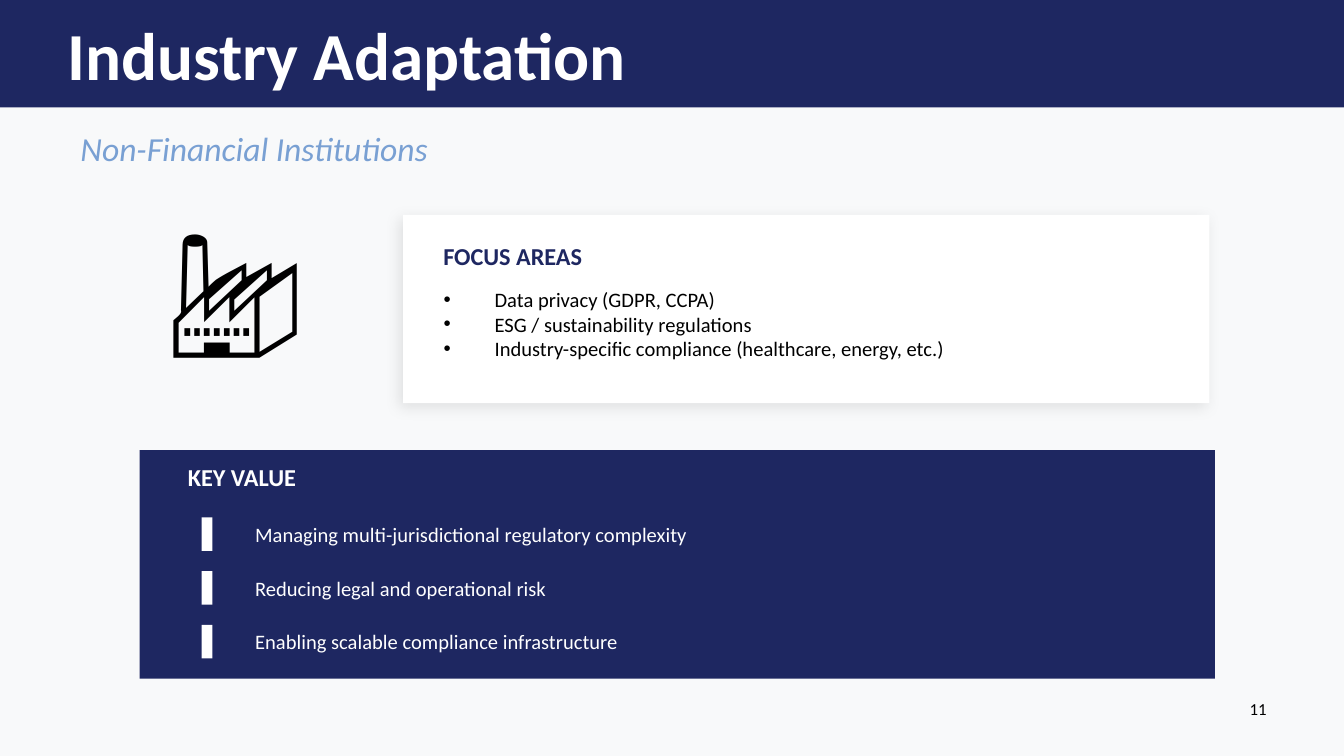
from lxml import etree
from pptx import Presentation
from pptx.dml.color import RGBColor
from pptx.enum.shapes import MSO_SHAPE
from pptx.enum.text import MSO_ANCHOR, MSO_AUTO_SIZE, PP_ALIGN
from pptx.util import Inches, Pt

RECT = MSO_SHAPE.RECTANGLE
TOP, MIDDLE = MSO_ANCHOR.TOP, MSO_ANCHOR.MIDDLE
FIXED = MSO_AUTO_SIZE.NONE
LEFT, CENTER = PP_ALIGN.LEFT, PP_ALIGN.CENTER
NAVY, WHITE, BLACK, BLUE = "1E2761", "FFFFFF", "000000", "79A0D3"

deck = Presentation()
deck.slide_width = Inches(10)
deck.slide_height = deck.slide_width * 9 // 16
slide = deck.slides.add_slide(deck.slide_layouts[1])
slide.background.fill.solid()
slide.background.fill.fore_color.rgb = RGBColor.from_string("F8F9FA")
title, body = slide.placeholders


def block(x, y, w, h, hue):
    shape = slide.shapes.add_shape(RECT, *map(Inches, (x, y, w, h)))
    shape.shadow.inherit = False
    shape.fill.solid()
    shape.fill.fore_color.rgb = RGBColor.from_string(hue)
    shape.line.fill.background()
    return shape


def write(text, x, y, w, h, size, hue, bold=False, italic=False, align=LEFT, shape=None):
    place = [Inches(n) for n in (x, y, w, h)]
    shape = shape or slide.shapes.add_textbox(*place)
    shape.left, shape.top, shape.width, shape.height = place
    frame = shape.text_frame
    frame.text = text
    frame.word_wrap = True
    frame.auto_size = FIXED
    frame.vertical_anchor = MIDDLE
    for para in frame.paragraphs:
        para.alignment = align
        para.space_before = Pt(0)
        for run in para.runs:
            font = run.font
            font.name, font.size = "Calibri", Pt(size)
            font.bold, font.italic = bold, italic
            font.color.rgb = RGBColor.from_string(hue)
    return frame


band = block(0, 0, 10, 0.8, NAVY)
title.element.addprevious(band.element)
head = write("Industry Adaptation", 0.5, 0.2, 9, 0.4, 36, WHITE, bold=True, shape=title)
head.margin_left = head.margin_right = head.margin_top = head.margin_bottom = 0
write("Non-Financial Institutions", 0.5, 0.95, 9, 0.3, 18, BLUE, italic=True)
write("🏭", 1, 1.6, 1.5, 1, 72, BLACK, align=CENTER)

card = block(3, 1.6, 6, 1.4, WHITE)
space = "http://schemas.openxmlformats.org/drawingml/2006/main"
effects = card.element.spPr.find(f"{{{space}}}effectLst")
effects.append(etree.fromstring(
    f'<a:outerShdw xmlns:a="{space}" blurRad="{Pt(8)}" dist="{Pt(3)}" dir="8100000" '
    'algn="bl" rotWithShape="0"><a:srgbClr val="000000"><a:alpha val="10000"/>'
    '</a:srgbClr></a:outerShdw>'))
write("FOCUS AREAS", 3.2, 1.75, 5.6, 0.3, 13, NAVY, bold=True)

areas = [
    "Data privacy (GDPR, CCPA)",
    "ESG / sustainability regulations",
    "Industry-specific compliance (healthcare, energy, etc.)",
]
slide.shapes[-1].element.addnext(body.element)
focus = write("\n".join(areas), 3.2, 2.09, 5.6, 0.64, 11, BLACK, shape=body)
for para in focus.paragraphs:
    props = para._p.get_or_add_pPr()
    props.set("marL", str(Inches(0.38)))
    props.set("indent", str(-Inches(0.38)))

block(1.04, 3.35, 8, 1.7, NAVY)
write("KEY VALUE", 1.3, 3.4, 7.4, 0.3, 13, WHITE, bold=True)
values = [
    "Managing multi-jurisdictional regulatory complexity",
    "Reducing legal and operational risk",
    "Enabling scalable compliance infrastructure",
]
for row, value in enumerate(values):
    y = 3.85 + 0.4 * row
    block(1.5, y, 0.08, 0.25, WHITE)
    write(value, 1.8, y, 6.9, 0.25, 11, WHITE)

page = write("11", 9.2, 5.15, 0.47, 0.35, 9, BLACK)
page.vertical_anchor = TOP

deck.save("out.pptx")
